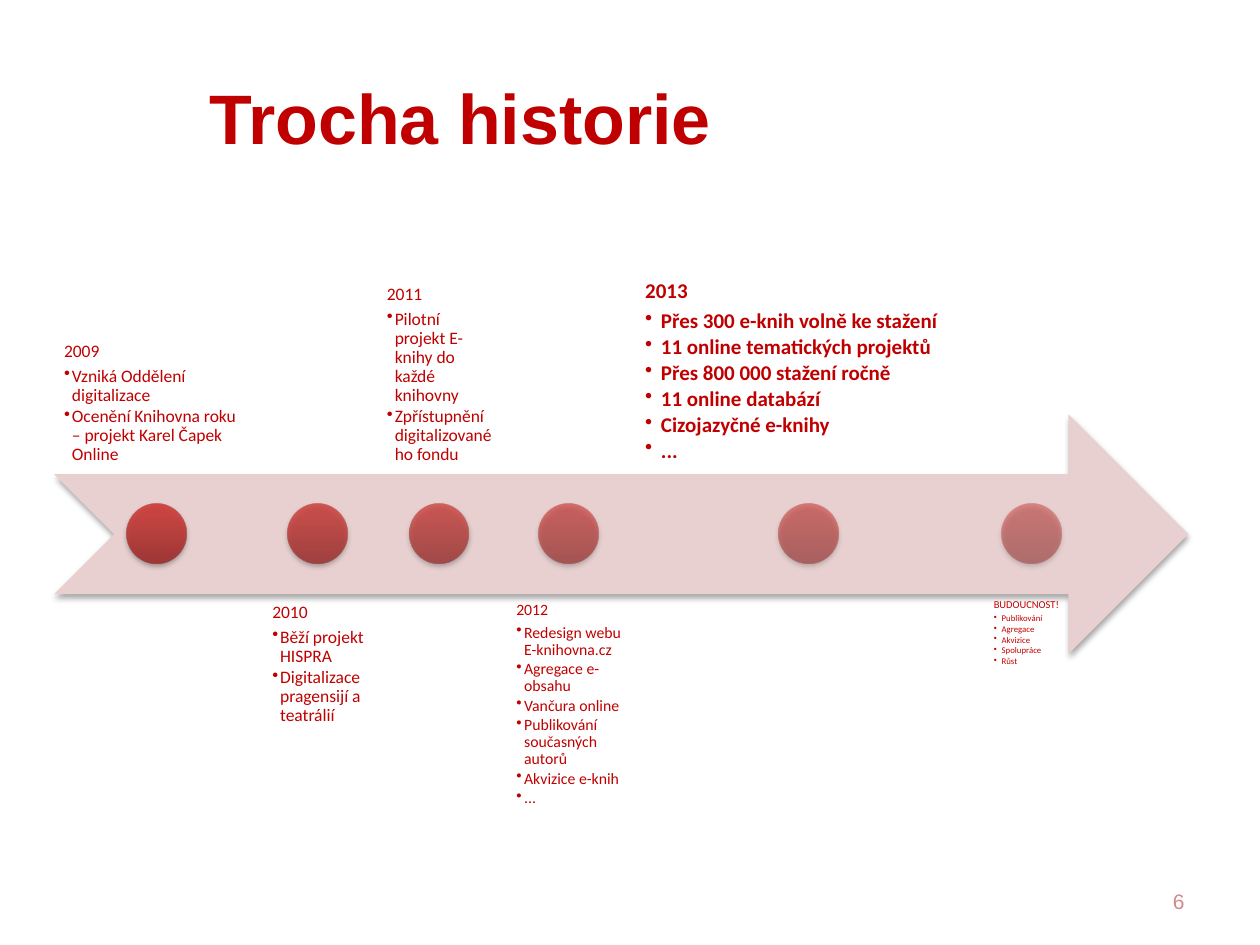
from lxml.etree import SubElement
from pptx import Presentation
from pptx.dml.color import RGBColor
from pptx.enum.shapes import MSO_SHAPE
from pptx.enum.text import MSO_ANCHOR, PP_ALIGN
from pptx.oxml import parse_xml
from pptx.oxml.ns import nsdecls, qn
from pptx.util import Pt


def set_font(paragraph, name, size, color, bold=False):
    font = paragraph.font
    font.name, font.size, font.bold = name, Pt(size), bold
    font.color.rgb = RGBColor.from_string(color)


def add_soft_shape(preset, left, top, width, height):
    shape = slide.shapes.add_shape(preset, Pt(left), Pt(top), Pt(width), Pt(height))
    shape.line.fill.background()
    shape.shadow.inherit = False
    effects = shape._element.spPr.find(qn("a:effectLst"))
    effects.append(parse_xml(
        f'<a:outerShdw {nsdecls("a")} blurRad="{Pt(3.1)}" dist="{Pt(1.8)}" dir="5400000" rotWithShape="0">'
        '<a:srgbClr val="000000"><a:alpha val="35000"/></a:srgbClr></a:outerShdw>'))
    return shape


RED = "C00000"
DOT_SIZE = 34
DOT_STOPS = [(0, "9C2F2D"), (80, "CB3E3A"), (100, "CE3B37")]
UPPER_TOP, LOWER_TOP, LABEL_HEIGHT = 134, 339, 137

presentation = Presentation()
presentation.slide_width, presentation.slide_height = Pt(720), Pt(540)
slide = presentation.slides.add_slide(presentation.slide_layouts[5])

title = slide.shapes.title
title.left, title.top, title.width, title.height = Pt(112.5), Pt(21.5), Pt(571.5), Pt(90)
title.text_frame.text = "Trocha historie"
title.text_frame.vertical_anchor = MSO_ANCHOR.MIDDLE
paragraph = title.text_frame.paragraphs[0]
paragraph.alignment = PP_ALIGN.LEFT
set_font(paragraph, "Arial", 40, RED, True)

number_box = slide.shapes.add_textbox(Pt(516), Pt(500.5), Pt(168), Pt(28.75))
number_box.text_frame.word_wrap = True
number_box.text_frame.vertical_anchor = MSO_ANCHOR.MIDDLE
paragraph = number_box.text_frame.paragraphs[0]
paragraph.text = "6"
paragraph.alignment = PP_ALIGN.RIGHT
set_font(paragraph, "Arial", 12, "D28989")

arrow = add_soft_shape(MSO_SHAPE.NOTCHED_RIGHT_ARROW, 31, 236.75, 648, 137)
arrow.fill.solid()
arrow.fill.fore_color.rgb = RGBColor.from_string("E8D0D0")

milestones = [
    ("2009", 31, 116, 72.25, 10, 10, 5.6, 4.5,
     ["Vzniká Oddělení digitalizace", "Ocenění Knihovna roku – projekt Karel Čapek Online"]),
    ("2010", 150, 63.5, 164.25, 10, 10, 5.6, 4.5,
     ["Běží projekt HISPRA", "Digitalizace pragensijí a teatrálií"]),
    ("2011", 215.5, 72, 234, 10, 10, 5.6, 4.5,
     ["Pilotní projekt E-knihy do každé knihovny", "Zpřístupnění digitalizovaného fondu"]),
    ("2012", 290, 70, 307.75, 9, 9, 5, 4.5,
     ["Redesign webu E-knihovna.cz", "Agregace e-obsahu", "Vančura online",
      "Publikování současných autorů", "Akvizice e-knih", "..."]),
    ("2013", 362, 199.5, 445, 12, 12, 6.7, 9,
     ["Přes 300 e-knih volně ke stažení", "11 online tematických projektů",
      "Přes 800 000 stažení ročně", "11 online databází", "Cizojazyčné e-knihy", "..."]),
    ("BUDOUCNOST!", 564.5, 50.5, 572.25, 6, 5, 3.4, 4.5,
     ["Publikování", "Agregace", "Akvizice", "Spolupráce", "Růst"]),
]
upper_years = {"2009", "2011", "2013"}

for index, (year, left, width, dot_left, year_size, item_size, inset, indent, items) in enumerate(milestones):
    upper = year in upper_years
    label = slide.shapes.add_textbox(Pt(left), Pt(UPPER_TOP if upper else LOWER_TOP), Pt(width), Pt(LABEL_HEIGHT))
    frame = label.text_frame
    frame.word_wrap = True
    frame.vertical_anchor = MSO_ANCHOR.BOTTOM if upper else MSO_ANCHOR.TOP
    frame.margin_left = frame.margin_top = frame.margin_right = frame.margin_bottom = Pt(inset)
    frame.text = "\n".join([year, *items])
    for position, paragraph in enumerate(frame.paragraphs):
        size = item_size if position else year_size
        paragraph.line_spacing = 0.9
        paragraph.space_after = Pt(round(size * (0.15 if position else 0.35), 2))
        if position:
            paragraph.level = 1
            properties = paragraph._p.get_or_add_pPr()
            properties.set("marL", str(Pt(indent)))
            properties.set("indent", str(-Pt(indent)))
            SubElement(properties, qn("a:buChar")).set("char", "•")
        set_font(paragraph, "Calibri", size, RED, year == "2013")

    dot = add_soft_shape(MSO_SHAPE.OVAL, dot_left, 288, DOT_SIZE, DOT_SIZE)
    opacity = 90 - 8 * index
    stops = "".join(
        f'<a:gs pos="{place * 1000}"><a:srgbClr val="{color}"><a:alpha val="{opacity * 1000}"/></a:srgbClr></a:gs>'
        for place, color in DOT_STOPS)
    dot._element.spPr.find(qn("a:ln")).addprevious(parse_xml(
        f'<a:gradFill {nsdecls("a")} rotWithShape="1"><a:gsLst>{stops}</a:gsLst>'
        '<a:lin ang="16200000" scaled="0"/></a:gradFill>'))

presentation.save("out.pptx")
